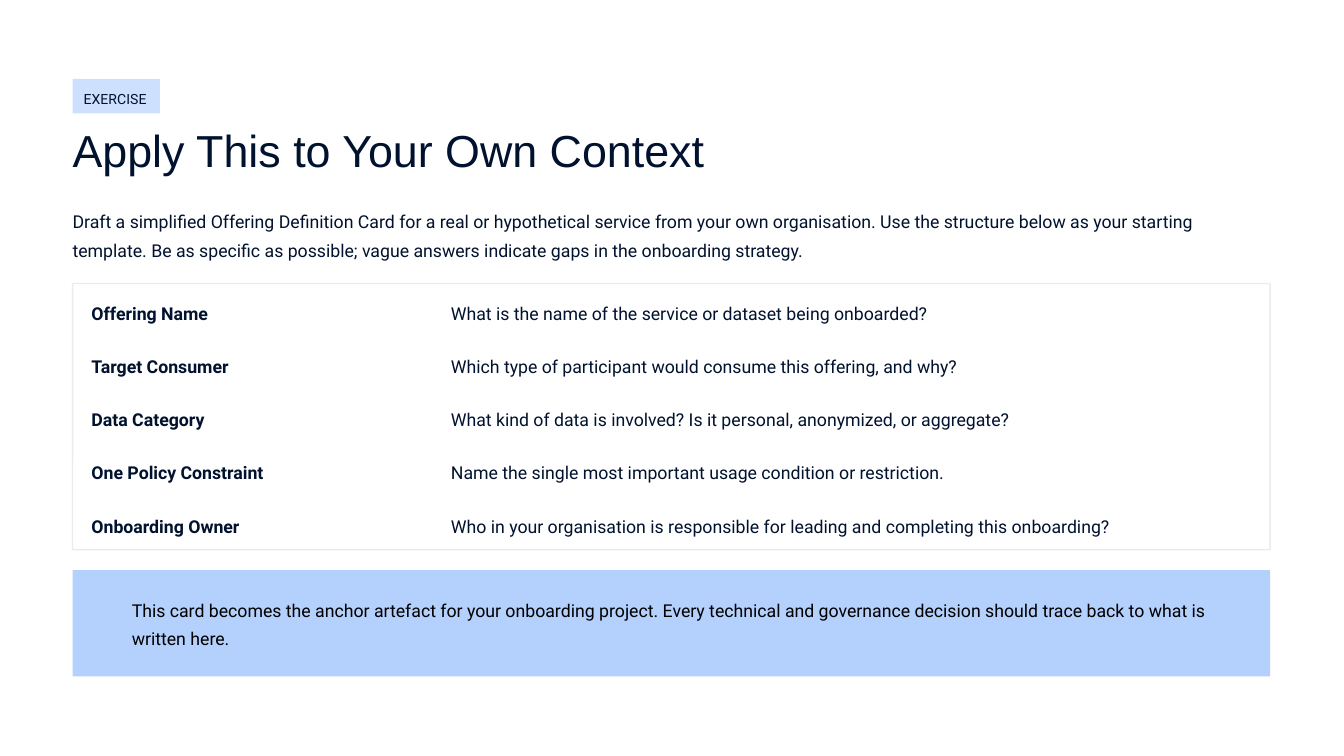
from pptx import Presentation
from pptx.dml.color import RGBColor
from pptx.enum.shapes import MSO_SHAPE
from pptx.util import Pt

COLORS = {
    "background": "FFFFFF",
    "ink": "01122E",
    "black": "000000",
    "tag": "CDE0FE",
    "callout": "B4D0FD",
    "border": "EBEBEB",
}
LEFT = 38.9
CONTENT_WIDTH = 641.5
LABEL_LEFT = 49
QUESTION_LEFT = 241.6
FIRST_ROW_TOP = 158.4
ROW_PITCH = 28.5

CARD_ROWS = [
    ("Offering Name", "What is the name of the service or dataset being onboarded?"),
    ("Target Consumer", "Which type of participant would consume this offering, and why?"),
    ("Data Category", "What kind of data is involved? Is it personal, anonymized, or aggregate?"),
    ("One Policy Constraint", "Name the single most important usage condition or restriction."),
    ("Onboarding Owner", "Who in your organisation is responsible for leading and completing this onboarding?"),
]


def color(name):
    return RGBColor.from_string(COLORS[name])


def add_panel(slide, left, top, width, height, radius, fill=None, line=None):
    shape = slide.shapes.add_shape(
        MSO_SHAPE.ROUNDED_RECTANGLE, Pt(left), Pt(top), Pt(width), Pt(height)
    )
    shape.adjustments[0] = radius / min(width, height)
    shape.shadow.inherit = False
    if fill:
        shape.fill.solid()
        shape.fill.fore_color.rgb = color(fill)
    else:
        shape.fill.background()
    if line:
        shape.line.color.rgb = color(line)
        shape.line.width = Pt(0.75)
    else:
        shape.line.fill.background()


def add_text(slide, text, left, top, width, height, size=9.5, font="Roboto",
             ink="ink", bold=False, spacing=1.33):
    box = slide.shapes.add_textbox(Pt(left), Pt(top), Pt(width), Pt(height))
    frame = box.text_frame
    frame.word_wrap = True
    frame.margin_left = frame.margin_top = frame.margin_right = frame.margin_bottom = 0
    paragraph = frame.paragraphs[0]
    paragraph.text = text
    paragraph.line_spacing = spacing
    paragraph.font.name = font
    paragraph.font.size = Pt(size)
    paragraph.font.bold = bold
    paragraph.font.color.rgb = color(ink)


def add_header(slide):
    add_panel(slide, LEFT, 42.3, 46.8, 18.5, 0.5, fill="tag")
    add_text(slide, "EXERCISE", 44.8, 45.4, 70.6, 12.2, size=7.5)
    add_text(slide, "Apply This to Your Own Context", LEFT, 64.8, 401, 30.2,
             size=24, font="Arial", spacing=1.04)
    add_text(
        slide,
        "Draft a simplified Offering Definition Card for a real or hypothetical service "
        "from your own organisation. Use the structure below as your starting template. "
        "Be as specific as possible; vague answers indicate gaps in the onboarding strategy.",
        LEFT, 109.4, CONTENT_WIDTH, 31,
    )


def add_definition_card(slide):
    add_panel(slide, LEFT, 151.9, CONTENT_WIDTH, 142.6, 0.5, line="border")
    for index, (label, question) in enumerate(CARD_ROWS):
        top = FIRST_ROW_TOP + index * ROW_PITCH
        add_text(slide, label, LABEL_LEFT, top, 208.8, 15.8, bold=True)
        add_text(slide, question, QUESTION_LEFT, top, 465, 15.8)


def add_callout(slide):
    add_panel(slide, LEFT, 305.4, CONTENT_WIDTH, 57, 0.5, fill="callout")
    add_text(
        slide,
        "This card becomes the anchor artefact for your onboarding project. Every technical "
        "and governance decision should trace back to what is written here.",
        70.6, 317.5, 600.5, 31, ink="black",
    )


def main():
    presentation = Presentation()
    presentation.slide_width = Pt(720)
    presentation.slide_height = Pt(405)
    slide = presentation.slides.add_slide(presentation.slide_layouts[6])
    slide.background.fill.solid()
    slide.background.fill.fore_color.rgb = color("background")
    add_header(slide)
    add_definition_card(slide)
    add_callout(slide)
    presentation.save("out.pptx")


if __name__ == "__main__":
    main()
